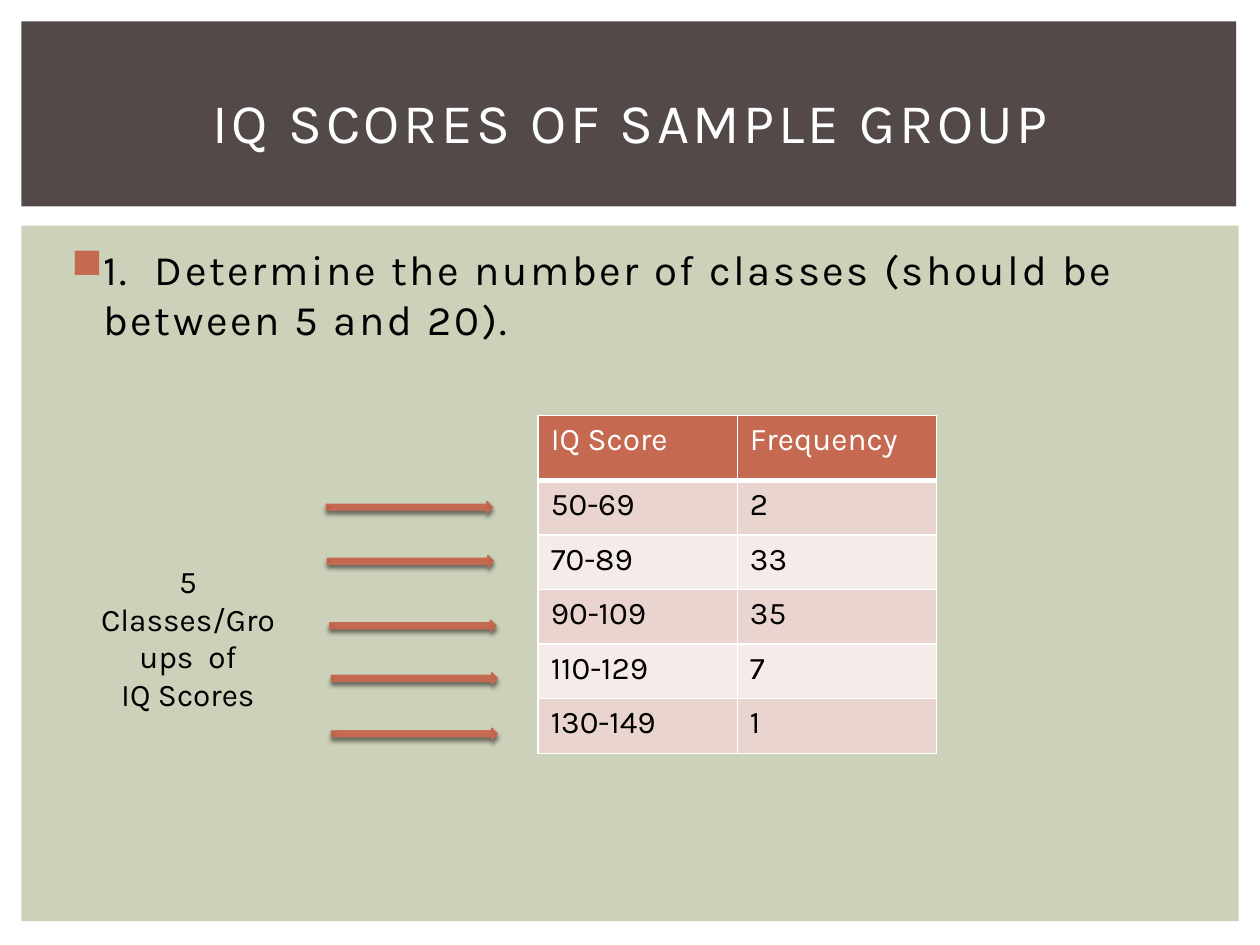
from lxml import etree
from pptx import Presentation
from pptx.dml.color import RGBColor
from pptx.enum import shapes, text
from pptx.oxml import parse_xml
from pptx.oxml.ns import qn
from pptx.util import Cm, Pt

WHITE = RGBColor(0xFF, 0xFF, 0xFF)
BLACK = RGBColor(0, 0, 0)
BROWN = RGBColor(0x53, 0x49, 0x49)
SAGE = RGBColor(0xCC, 0xD1, 0xB9)
RUST = RGBColor(0xC6, 0x69, 0x51)
DEEP = RGBColor(0xB8, 0x62, 0x4B)
PINK = RGBColor(0xEA, 0xD4, 0xD0)
PALE = RGBColor(0xF5, 0xEB, 0xE9)

SCORES = [("IQ Score", "Frequency"), ("50-69", "2"), ("70-89", "33"),
          ("90-109", "35"), ("110-129", "7"), ("130-149", "1")]
ARROWS = [(0, 0), (0.02, 1.09), (0.07, 2.39), (0.1, 3.45), (0.1, 4.57)]
NS = 'xmlns:a="http://schemas.openxmlformats.org/drawingml/2006/main"'


def style(para, words, size, color, gap=0):
    """Add a run in the slide font; gap is letter spacing in points."""
    run = para.add_run()
    run.text = words
    form = {"size": Pt(size), "name": "Karla"}
    for key, val in form.items():
        setattr(run.font, key, val)
    run.font.color.rgb = color
    if gap:
        run.font._element.set("spc", str(int(gap * 100)))


def panel(slide, box, color):
    rect = slide.shapes.add_shape(shapes.MSO_SHAPE.RECTANGLE, *map(Cm, box))
    rect.shadow.inherit = False
    rect.fill.solid()
    rect.fill.fore_color.rgb = color
    rect.line.fill.background()


def frame(slide, box, anchor=text.MSO_ANCHOR.TOP):
    body = slide.shapes.add_textbox(*map(Cm, box)).text_frame
    form = {"word_wrap": True, "vertical_anchor": anchor}
    for key, val in form.items():
        setattr(body, key, val)
    return body


def title(slide, box):
    x, y, w, h = box
    panel(slide, box, BROWN)
    body = frame(slide, (x + 0.64, y + 0.56, w - 1.19, h - 0.81),
                 text.MSO_ANCHOR.MIDDLE)
    para = body.paragraphs[0]
    para.alignment = text.PP_ALIGN.CENTER
    style(para, "IQ SCORES OF SAMPLE GROUP", 32, WHITE, 2)


def bullet(slide, box):
    para = frame(slide, box).paragraphs[0]
    style(para, "1.  Determine the number of classes (should be between 5 and 20).",
          24, BLACK, 1.5)
    props = para._p.get_or_add_pPr()
    props.set("marL", str(Cm(0.76)))
    props.set("indent", str(Cm(-0.64)))
    for part in (f'<a:spcBef {NS}><a:spcPct val="20000"/></a:spcBef>',
                 f'<a:buClr {NS}><a:srgbClr val="{RUST}"/></a:buClr>',
                 f'<a:buChar {NS} char="■"/>'):
        props.append(parse_xml(part))


def border(cell, low):
    """Draw white cell edges, the bottom one low points wide."""
    props = cell._tc.get_or_add_tcPr()
    for spot, (side, wide) in enumerate(
            {"lnL": 1, "lnR": 1, "lnT": 1, "lnB": low}.items()):
        edge = etree.Element(qn(f"a:{side}"), w=str(Pt(wide)))
        fill = etree.SubElement(edge, qn("a:solidFill"))
        etree.SubElement(fill, qn("a:srgbClr"), val=str(WHITE))
        props.insert(spot, edge)


def table(slide, box):
    x, y, w, h = box
    grid = slide.shapes.add_table(len(SCORES), 2, *map(Cm, box)).table
    head = 1.3
    for col in grid.columns:
        col.width = Cm(w / 2)
    for i, pair in enumerate(SCORES):
        grid.rows[i].height = Cm(head if i == 0 else (h - head) / (len(SCORES) - 1))
        for j, words in enumerate(pair):
            cell = grid.cell(i, j)
            cell.fill.solid()
            cell.fill.fore_color.rgb = RUST if i == 0 else PINK if i % 2 else PALE
            border(cell, 1 if i else 3)
            style(cell.text_frame.paragraphs[0], words, 18, BLACK if i else WHITE)


def arrow(slide, box):
    item = slide.shapes.add_shape(shapes.MSO_SHAPE.RIGHT_ARROW, *map(Cm, box))
    item.line.color.rgb = RUST
    item.line.width = Pt(0.79)
    stops = "".join(f'<a:gs pos="{pos}000"><a:srgbClr val="{color}"/></a:gs>'
                    for pos, color in ((0, RUST), (90, RUST), (100, DEEP)))
    fill = parse_xml(
        f'<a:gradFill {NS}><a:gsLst>{stops}</a:gsLst><a:path path="circle">'
        '<a:fillToRect l="100000" t="100000" r="100000" b="100000"/>'
        '</a:path></a:gradFill>')
    shade = parse_xml(
        f'<a:effectLst {NS}><a:outerShdw blurRad="{Pt(2.5)}" dist="{Pt(2)}" '
        'dir="5400000" rotWithShape="0"><a:srgbClr val="000000">'
        '<a:alpha val="50000"/></a:srgbClr></a:outerShdw></a:effectLst>')
    props = item._element.spPr
    props.find(qn("a:prstGeom")).addnext(fill)
    props.append(shade)


def label(slide, box):
    body = frame(slide, box)
    for para, words in ((body.paragraphs[0], "5 Classes/Groups  of"),
                        (body.add_paragraph(), "IQ Scores")):
        para.alignment = text.PP_ALIGN.CENTER
        style(para, words, 18, BLACK)


def content(slide, box):
    x, y, w, h = box
    panel(slide, box, SAGE)
    bullet(slide, (x + 0.64, y + 0.23, w - 1.2, 12.24))
    table(slide, (x + 10.42, y + 3.83, 8.03, 6.81))
    for dx, dy in ARROWS:
        arrow(slide, (x + 6.15 + dx, y + 5.56 + dy, 3.35, 0.23))
    label(slide, (x + 1.25, y + 6.65, 4.22, 2.57))


def main():
    deck = Presentation()
    deck.slide_width, deck.slide_height = Cm(25.4), Cm(19.05)
    slide = deck.slides.add_slide(deck.slide_layouts[6])
    content(slide, (0.43, 4.55, 24.54, 14.02))
    title(slide, (0.43, 0.43, 24.49, 3.73))
    deck.save("out.pptx")


if __name__ == "__main__":
    main()
